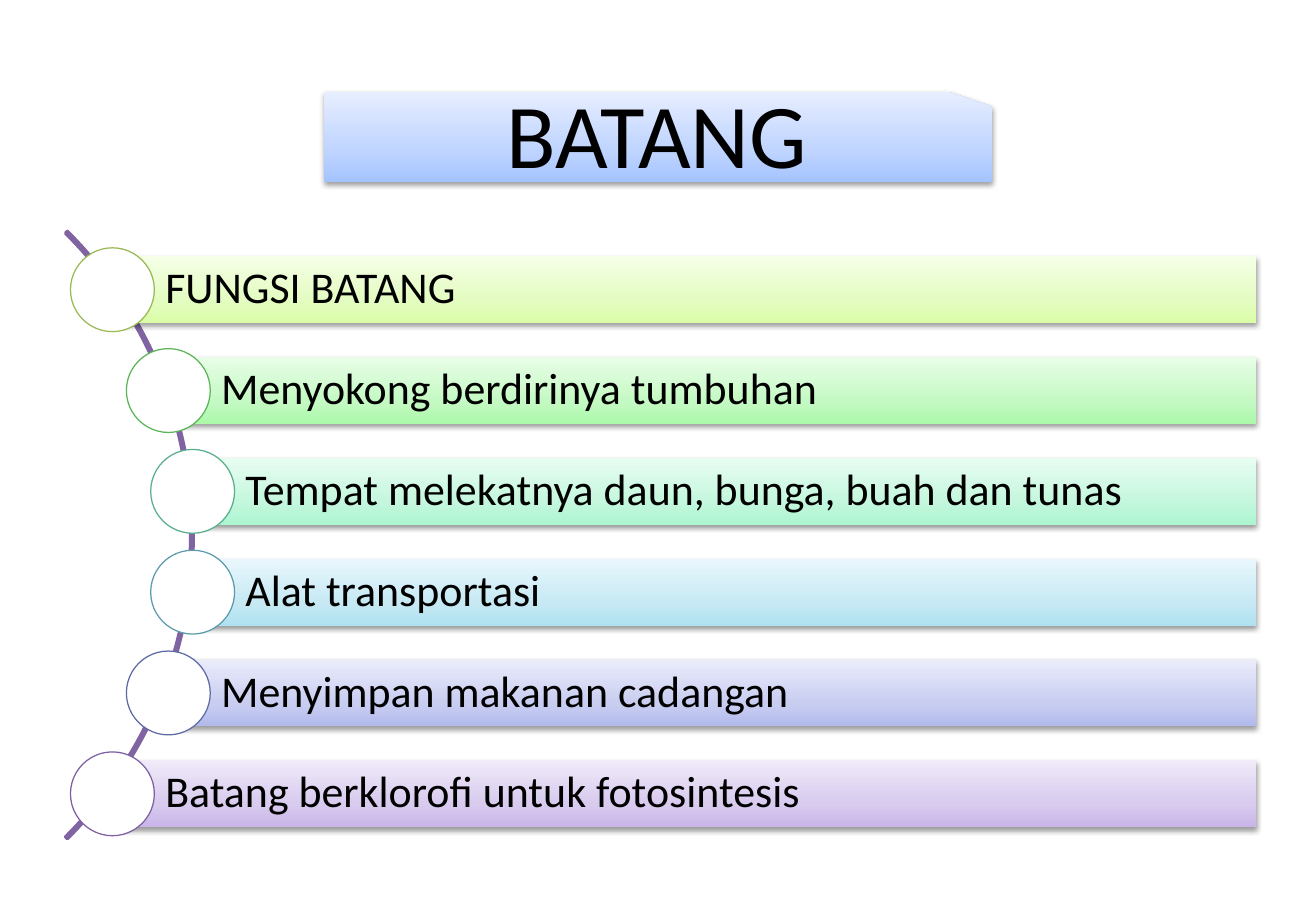
from copy import deepcopy
from dataclasses import dataclass

from lxml.etree import SubElement as Sub
from pptx import Presentation
from pptx.dml.color import RGBColor as Rgb
from pptx.enum.shapes import MSO_SHAPE as Kind
from pptx.enum.text import MSO_ANCHOR as Anchor, MSO_AUTO_SIZE as Fit, PP_ALIGN as Align
from pptx.oxml.ns import qn
from pptx.util import Pt

PX = 9144


@dataclass(frozen=True)
class Theme:
    """Colours, font and type sizes of the slide."""
    font: str = "Calibri"
    ink: str = "000000"
    paper: str = "FFFFFF"
    arc: str = "8064A2"
    banner: tuple = ("A4C4FF", "BFD4FF", "E6EEFF")
    stops: tuple = (0, 0.35, 1)
    head: int = 54
    body: int = 26


THEME = Theme()
ROWS = (
    ("FUNGSI BATANG", "98B955", ("DAFDA7", "E4FCC2", "F5FFE7")),
    ("Menyokong berdirinya tumbuhan", "5BB457", ("ACF9AA", "C5F9C4", "E8FEE7")),
    ("Tempat melekatnya daun, bunga, buah dan tunas", "59AF8B", ("ACF5D1", "C5F7DE", "E8FDF2")),
    ("Alat transportasi", "5B9BAA", ("AFE1F0", "C7E9F4", "E9F7FC")),
    ("Menyimpan makanan cadangan", "5E6AA5", ("B2BAEC", "C9CEF1", "EAECFA")),
    ("Batang berklorofi untuk fotosintesis", "7D60A0", ("C9B5E8", "D8CBEE", "F0EAF9")),
)
LEFTS = (92, 138, 158)
RIGHT, TOP, PITCH, TALL, DOT = 1034, 211, 83, 55, 69


def apply(item, form):
    """Set each attribute named in the format dict."""
    for name, value in form.items():
        setattr(item, name, value)


def write(shape, text, size, align, pads):
    """Put one styled line of text in a shape."""
    frame = shape.text_frame
    sides = ("margin_left", "margin_top", "margin_right", "margin_bottom")
    apply(frame, {"text": text, "word_wrap": True, "auto_size": Fit.NONE,
                  "vertical_anchor": Anchor.MIDDLE})
    apply(frame, {side: pad * PX for side, pad in zip(sides, pads)})
    line = frame.paragraphs[0]
    apply(line, {"alignment": align, "line_spacing": 0.9})
    apply(line.font, {"name": THEME.font, "size": Pt(size)})
    line.font.color.rgb = Rgb.from_string(THEME.ink)


def blend(shape, tones):
    """Fill a shape with an upward blend of three tones."""
    fill = shape.fill
    fill.gradient()
    fill.gradient_angle = 90
    first = shape.element.spPr.find(".//" + qn("a:gs"))
    first.addnext(deepcopy(first))
    for stop, tone, place in zip(fill.gradient_stops, tones, THEME.stops):
        stop.color.rgb = Rgb.from_string(tone)
        stop.position = place


def shade(shape):
    """Give a shape a soft shadow below it."""
    shape.shadow.inherit = False
    glow = shape.element.spPr.find(qn("a:effectLst"))
    drop = Sub(glow, qn("a:outerShdw"), blurRad=str(Pt(3.1)), dist=str(Pt(1.6)),
               dir="5400000", rotWithShape="0")
    tint = Sub(drop, qn("a:srgbClr"), val=THEME.ink)
    Sub(tint, qn("a:alpha"), val="38000")


def panel(slide, points, tones):
    """Draw a closed outline with a blend and a shadow."""
    pen = slide.shapes.build_freeform(*points[0], scale=PX)
    pen.add_line_segments(points[1:], close=True)
    shape = pen.convert_to_shape()
    blend(shape, tones)
    shape.line.fill.background()
    shade(shape)
    return shape


def outline(slide, kind, box, tone, width):
    """Add a preset shape with a coloured line."""
    shape = slide.shapes.add_shape(kind, *(side * PX for side in box))
    shape.shadow.inherit = False
    shape.line.color.rgb = Rgb.from_string(tone)
    shape.line.width = Pt(width)
    return shape


def banner(slide):
    """Draw the snipped banner and lay the title on it."""
    panel(slide, [(267, 76), (781, 76), (817, 88), (817, 150), (267, 150)], THEME.banner)
    title = slide.shapes.title
    apply(title, {"left": 267 * PX, "top": 76 * PX, "width": 550 * PX, "height": 74 * PX})
    write(title, "BATANG", THEME.head, Align.CENTER, (10, 13, 13, 10))
    slide.shapes.element.append(title.element)


def curve(slide):
    """Draw the arc that links the dots."""
    arc = outline(slide, Kind.BLOCK_ARC, (-548, 87, 707, 707), THEME.arc, 2)
    arc.fill.background()
    for spot, value in enumerate((189, 27, 0.003)):
        arc.adjustments[spot] = value


def row(slide, rank, text, tone, tones):
    """Draw one bar with its text and its dot."""
    left = LEFTS[min(rank, len(ROWS) - 1 - rank)]
    top = TOP + rank * PITCH
    base = top + TALL
    bar = panel(slide, [(left, top), (RIGHT, top), (RIGHT, base), (left, base)], tones)
    write(bar, text, THEME.body, Align.LEFT, (44, 7, 7, 7))
    box = (left - DOT // 2, top - (DOT - TALL) // 2, DOT, DOT)
    dot = outline(slide, Kind.OVAL, box, tone, 0.75)
    dot.fill.solid()
    dot.fill.fore_color.rgb = Rgb.from_string(THEME.paper)


def main():
    """Build the slide and save it."""
    deck = Presentation()
    apply(deck, {"slide_width": 1083 * PX, "slide_height": 750 * PX})
    slide = deck.slides.add_slide(deck.slide_layouts[5])
    banner(slide)
    curve(slide)
    for rank, parts in enumerate(ROWS):
        row(slide, rank, *parts)
    deck.save("out.pptx")


if __name__ == "__main__":
    main()
